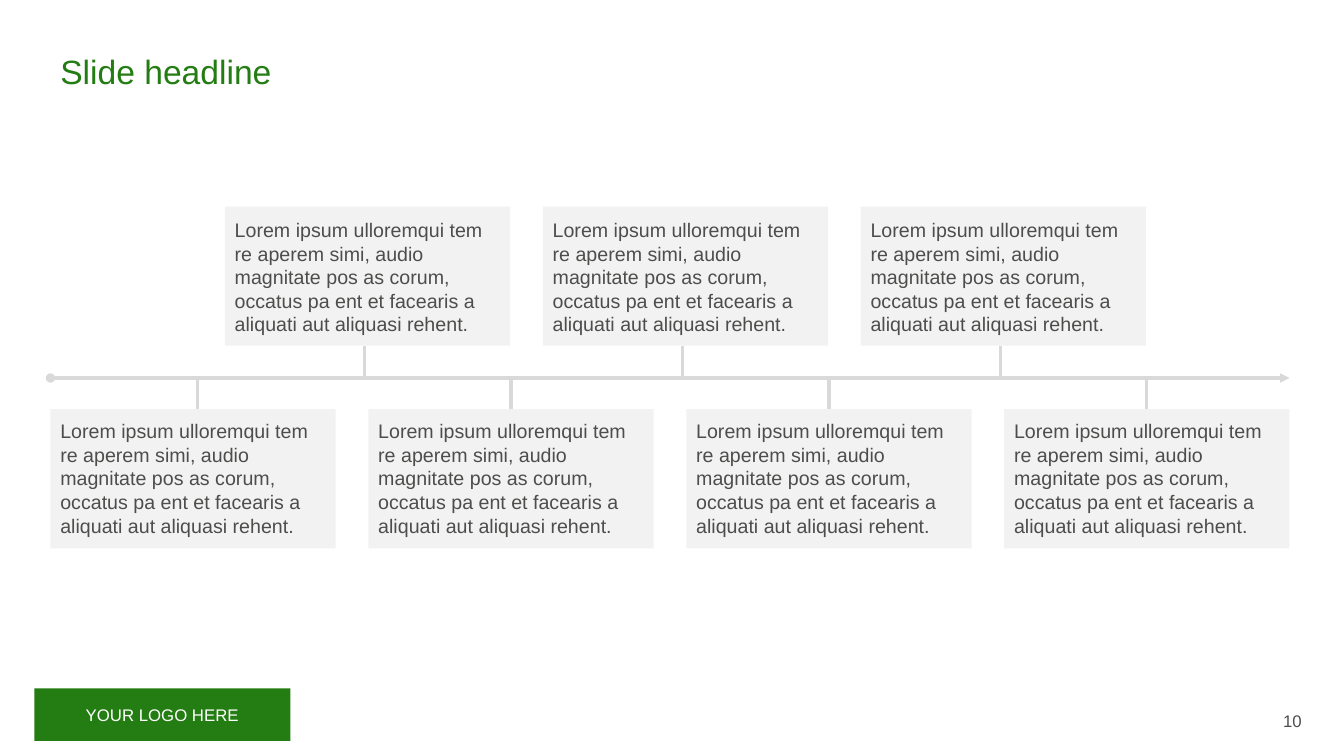
from pptx import Presentation
from pptx.dml.color import RGBColor
from pptx.enum.shapes import MSO_CONNECTOR as Connector, MSO_SHAPE as Shape
from pptx.enum.text import MSO_ANCHOR as Anchor, PP_ALIGN as Align
from pptx.oxml.ns import qn
from pptx.util import Inches, Pt
from lxml.etree import SubElement

GREEN, GRAY, PALE, INK, WHITE = "237D12", "D9D9D9", "F2F2F2", "4D4E4C", "FFFFFF"
LEFT, RIGHT, AXIS = 0.5, 12.79, 3.75
CARD_WIDTH, CARD_HEIGHT = 2.83, 1.38
PITCH = (RIGHT - LEFT - CARD_WIDTH) / 3
UPPER_LEFT, UPPER_TOP, LOWER_TOP = 2.23, 2.05, 4.06
LOREM = ("Lorem ipsum ulloremqui tem re aperem simi, audio magnitate pos as corum, "
         "occatus pa ent et facearis a aliquati aut aliquasi rehent.")


def color(code):
    """Turn a hex string into a colour."""
    return RGBColor.from_string(code)


def add_text(box, text, size, ink, align=Align.LEFT, anchor=Anchor.TOP):
    """Write one wrapped paragraph into a box and return it."""
    frame = box.text_frame
    frame.word_wrap = True
    frame.vertical_anchor = anchor
    para = frame.paragraphs[0]
    para.text = text
    para.alignment = align
    para.font.name = "Arial"
    para.font.size = Pt(size)
    para.font.color.rgb = color(ink)
    return para


def add_label(page, area, *style):
    """Add a plain text box."""
    return add_text(page.shapes.add_textbox(*map(Inches, area)), *style)


def add_block(page, area, fill, *style):
    """Add a filled rectangle with text."""
    box = page.shapes.add_shape(Shape.RECTANGLE, *map(Inches, area))
    box.shadow.inherit = False
    box.fill.solid()
    box.fill.fore_color.rgb = color(fill)
    box.line.fill.background()
    add_text(box, *style)
    return box


def add_line(page, *ends, head=None, tail=None):
    """Add a gray line with optional end marks."""
    line = page.shapes.add_connector(Connector.STRAIGHT, *map(Inches, ends))
    line.line.color.rgb = color(GRAY)
    line.line.width = Pt(2.25)
    properties = line._element.spPr
    outline = properties.find(qn("a:ln"))
    for tag, mark in (("a:headEnd", head), ("a:tailEnd", tail)):
        if mark:
            SubElement(outline, qn(tag), type=mark)
    SubElement(properties, qn("a:effectLst"))
    return line


def add_card(page, left, top, anchor, nudge=0):
    """Add a card and its stem to the axis, joined when the stem is centred."""
    card = add_block(page, (left, top, CARD_WIDTH, CARD_HEIGHT), PALE,
                     LOREM, 14, INK, Align.LEFT, anchor)
    frame = card.text_frame
    frame.margin_top = frame.margin_bottom = Inches(0.1)
    above = top < AXIS
    edge = top + CARD_HEIGHT if above else top
    stem = left + CARD_WIDTH / 2 + nudge
    line = add_line(page, stem, edge, stem, AXIS)
    if not nudge:
        line.begin_connect(card, 2 if above else 0)


def main():
    """Build the timeline slide."""
    deck = Presentation()
    deck.slide_width, deck.slide_height = Inches(13.33), Inches(7.5)
    page = deck.slides.add_slide(deck.slide_layouts[6])
    add_block(page, (0.34, 6.83, 2.54, 0.52), GREEN,
              "YOUR LOGO HERE", 12, WHITE, Align.CENTER, Anchor.MIDDLE)
    add_label(page, (10.01, 6.95, 3, 0.4), "10", 12, INK, Align.RIGHT, Anchor.MIDDLE)
    headline = add_label(page, (LEFT, 0.5, 11.97, 0.59), "Slide headline", 24, GREEN)
    headline.line_spacing = 0.9
    add_line(page, LEFT, AXIS, RIGHT, AXIS, head="oval", tail="triangle")
    for column in range(4):
        add_card(page, LEFT + column * PITCH, LOWER_TOP, Anchor.TOP,
                 0 if column else 0.04)
    for column in range(3):
        add_card(page, UPPER_LEFT + column * PITCH, UPPER_TOP, Anchor.BOTTOM, -0.03)
    deck.save("out.pptx")


if __name__ == "__main__":
    main()
